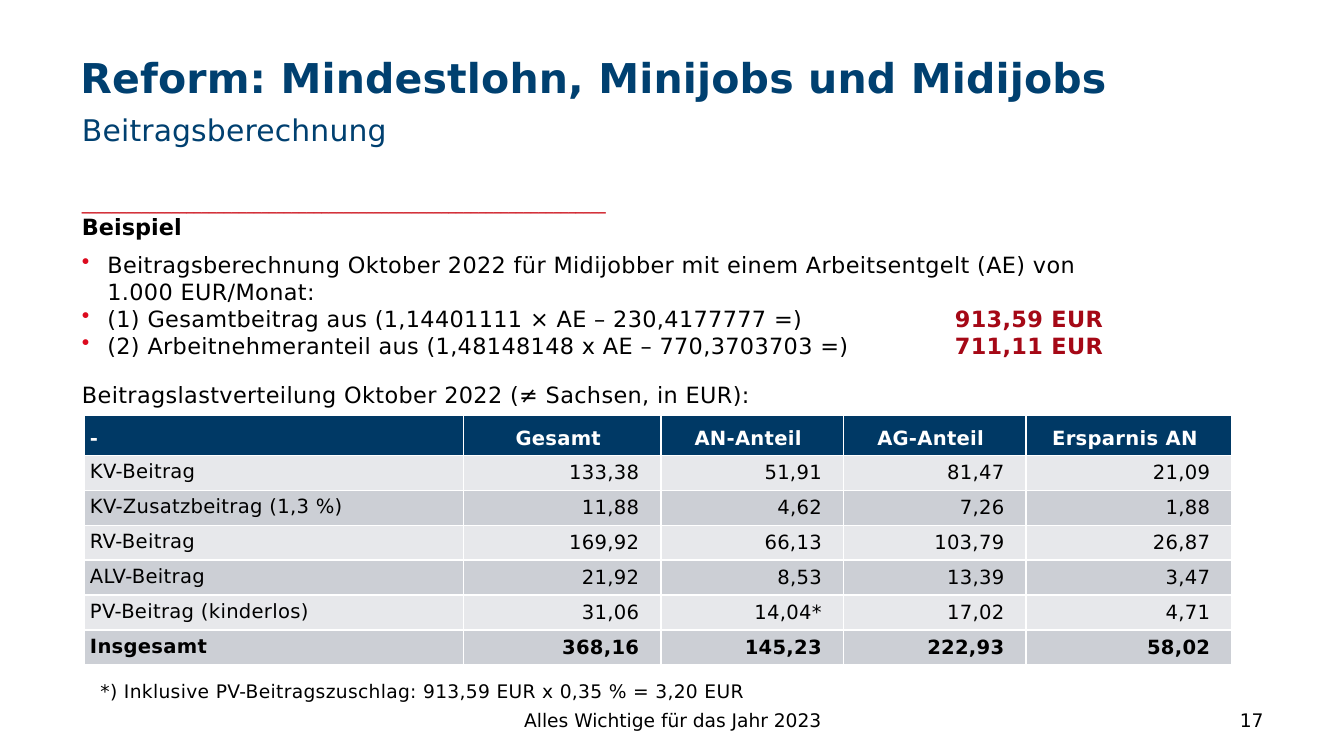
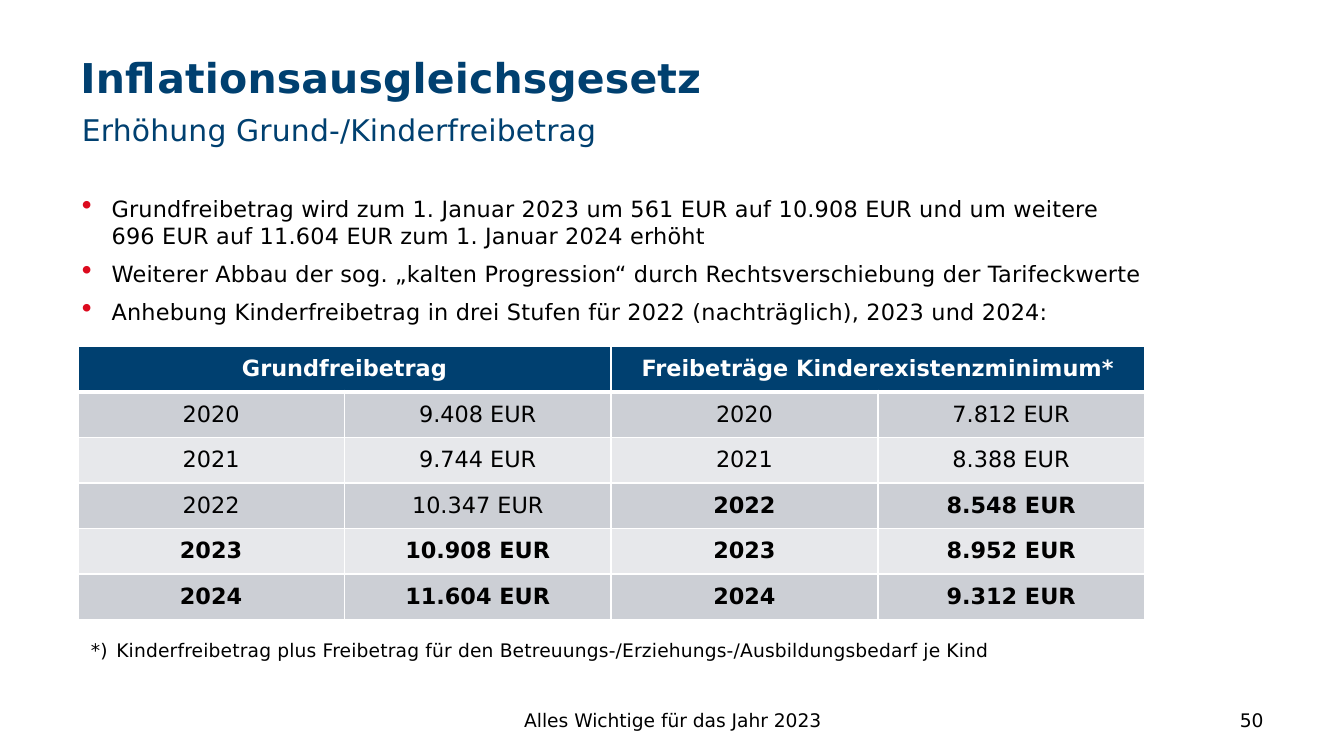
from dataclasses import dataclass

from lxml.etree import SubElement
from pptx import Presentation
from pptx.dml.color import RGBColor
from pptx.enum.text import MSO_ANCHOR, PP_ALIGN
from pptx.oxml.ns import qn
from pptx.util import Cm, Pt


@dataclass(frozen=True)
class Theme:
    font: str = "DejaVu Sans"
    blue: str = "004070"
    navy: str = "003965"
    red: str = "A50816"
    rule: str = "CE1620"
    dot: str = "DC0A1E"
    black: str = "000000"
    white: str = "FFFFFF"
    light: str = "E7E8EB"
    dark: str = "CCCFD5"
    title: float = 22
    lead: float = 16
    text: float = 12
    cell: float = 10.5
    small: float = 10
    tiny: float = 8


THEME = Theme()
FOOTER = "Alles Wichtige für das Jahr 2023"


def style_run(run, size, color=THEME.black, bold=False, space=0):
    font = run.font
    font.name, font.size, font.bold = THEME.font, Pt(size), bold
    font.color.rgb = RGBColor.from_string(color)
    if space:
        run._r.get_or_add_rPr().set("spc", str(space))


def style_para(para, size, color=THEME.black, bold=False, space=0, align=None):
    para.alignment = align
    for run in para.runs:
        style_run(run, size, color, bold, space)
    for gap in para._p.findall(qn("a:br")):
        SubElement(gap, qn("a:rPr")).set("sz", str(int(size * 100)))


def add_frame(slide, box, anchor=MSO_ANCHOR.TOP, top=0.13):
    frame = slide.shapes.add_textbox(*map(Cm, box)).text_frame
    frame.word_wrap = True
    frame.vertical_anchor = anchor
    frame.margin_left = frame.margin_right = Cm(0.25)
    frame.margin_top, frame.margin_bottom = Cm(top), Cm(0.13)
    return frame


def add_line(slide, box, text, size, anchor=MSO_ANCHOR.TOP, top=0.13, **look):
    frame = add_frame(slide, box, anchor, top)
    frame.text = text
    style_para(frame.paragraphs[0], size, **look)
    return frame.paragraphs[0]


def add_bullet(para, indent, scale=100):
    props = para._p.get_or_add_pPr()
    props.set("marL", str(Cm(indent)))
    props.set("indent", str(-Cm(indent)))
    color = SubElement(props, qn("a:buClr"))
    SubElement(color, qn("a:srgbClr")).set("val", THEME.dot)
    if scale != 100:
        SubElement(props, qn("a:buSzPct")).set("val", str(scale * 1000))
    SubElement(props, qn("a:buChar")).set("char", "•")


def add_tab(para, place, align):
    tabs = SubElement(para._p.get_or_add_pPr(), qn("a:tabLst"))
    tab = SubElement(tabs, qn("a:tab"))
    tab.set("pos", str(Cm(place)))
    tab.set("algn", align)


def set_edges(cell, base=1):
    props = cell._tc.get_or_add_tcPr()
    for at, (side, width) in enumerate(zip("LRTB", (1, 1, 1, base))):
        edge = SubElement(props, qn(f"a:ln{side}"))
        edge.set("w", str(Pt(width)))
        fill = SubElement(edge, qn("a:solidFill"))
        SubElement(fill, qn("a:srgbClr")).set("val", THEME.white)
        props.insert(at, edge)


def fill_cell(cell, text, fill, size, pads, anchor, base=1, **look):
    cell.text_frame.text = text
    style_para(cell.text_frame.paragraphs[0], size, **look)
    cell.vertical_anchor = anchor
    cell.margin_left, cell.margin_top, cell.margin_right, cell.margin_bottom = map(Cm, pads)
    cell.fill.solid()
    cell.fill.fore_color.rgb = RGBColor.from_string(fill)
    set_edges(cell, base)


def add_grid(slide, left, top, widths, heights):
    box = left, top, sum(widths), sum(heights)
    grid = slide.shapes.add_table(len(heights), len(widths), *map(Cm, box)).table
    grid.horz_banding = False
    for col, width in zip(grid.columns, widths):
        col.width = Cm(width)
    for row, height in zip(grid.rows, heights):
        row.height = Cm(height)
    return grid


def add_page(deck, title, lead, number):
    slide = deck.slides.add_slide(deck.slide_layouts[6])
    add_line(slide, (1.27, 0.81, 20.6, 1.12), title, THEME.title, top=0.18,
             color=THEME.blue, bold=True, space=10)
    add_line(slide, (1.3, 1.93, 20.6, 0.71), lead, THEME.lead, top=0.18,
             color=THEME.blue, space=10)
    add_line(slide, (8.69, 13.23, 8.05, 0.76), FOOTER, THEME.small,
             MSO_ANCHOR.MIDDLE, align=PP_ALIGN.CENTER)
    add_line(slide, (18.21, 13.23, 5.92, 0.76), number, THEME.small,
             MSO_ANCHOR.MIDDLE, align=PP_ALIGN.RIGHT)
    return slide


def add_sample(slide, box):
    frame = add_frame(slide, box)
    head = frame.paragraphs[0]
    head.text = "_" * 70 + "\nBeispiel"
    style_para(head, THEME.tiny, THEME.rule, True)
    head.runs[0].font.italic = True
    style_run(head.runs[1], THEME.text, bold=True)
    items = (
        ("Beitragsberechnung Oktober 2022 für Midijobber mit einem Arbeitsentgelt (AE) "
         "von 1.000 EUR/Monat:", ""),
        ("(1) Gesamtbeitrag aus (1,14401111 × AE – 230,4177777 =)\t", "913,59 EUR"),
        ("(2) Arbeitnehmeranteil aus (1,48148148 x AE – 770,3703703 =)\t", "711,11 EUR"),
    )
    for text, sum_text in items:
        para = frame.add_paragraph()
        para.text = text
        add_bullet(para, 0.48)
        style_para(para, THEME.text, space=20)
        if sum_text:
            add_tab(para, 19.3, "r")
            run = para.add_run()
            run.text = sum_text
            style_run(run, THEME.text, THEME.red, True, 20)
        else:
            para.space_before = Pt(6)
    last = frame.add_paragraph()
    last.text = "Beitragslastverteilung Oktober 2022 (≠ Sachsen, in EUR):"
    last.space_before = Pt(12)
    style_para(last, THEME.text, space=20)


def add_shares(slide, left, top):
    rows = (
        ("-", "Gesamt", "AN-Anteil", "AG-Anteil", "Ersparnis AN"),
        ("KV-Beitrag", "133,38", "51,91", "81,47", "21,09"),
        ("KV-Zusatzbeitrag (1,3 %)", "11,88", "4,62", "7,26", "1,88"),
        ("RV-Beitrag", "169,92", "66,13", "103,79", "26,87"),
        ("ALV-Beitrag", "21,92", "8,53", "13,39", "3,47"),
        ("PV-Beitrag (kinderlos)", "31,06", "14,04*", "17,02", "4,71"),
        ("Insgesamt", "368,16", "145,23", "222,93", "58,02"),
    )
    widths = 7.16, 3.73, 3.45, 3.45, 3.89
    grid = add_grid(slide, left, top, widths, [0.76] + [0.66] * 6)
    for r, row in enumerate(rows):
        head = r == 0
        fill = THEME.navy if head else (THEME.dark, THEME.light)[r % 2]
        for c, text in enumerate(row):
            first = c == 0
            anchor = MSO_ANCHOR.TOP if first else MSO_ANCHOR.MIDDLE
            align = PP_ALIGN.CENTER if head else PP_ALIGN.RIGHT
            fill_cell(grid.cell(r, c), text, fill, THEME.cell,
                      (0.1, 0.1, 0.25 if head or first else 0.41, 0.1),
                      MSO_ANCHOR.BOTTOM if head else anchor,
                      color=THEME.white if head else THEME.black,
                      bold=r in (0, len(rows) - 1), space=20,
                      align=PP_ALIGN.LEFT if first else align)


def add_points(slide, box):
    items = (
        "Grundfreibetrag wird zum 1. Januar 2023 um 561 EUR auf 10.908 EUR und um weitere\n"
        "696 EUR auf 11.604 EUR zum 1. Januar 2024 erhöht",
        "Weiterer Abbau der sog. „kalten Progression“ durch Rechtsverschiebung der Tarifeckwerte",
        "Anhebung Kinderfreibetrag in drei Stufen für 2022 (nachträglich), 2023 und 2024:",
    )
    frame = add_frame(slide, box)
    for i, text in enumerate(items):
        para = frame.add_paragraph() if i else frame.paragraphs[0]
        para.text = text
        add_bullet(para, 0.56, 130)
        para.space_after = Pt(6)
        style_para(para, THEME.text, space=10)


def add_limits(slide, left, top):
    heads = "Grundfreibetrag", "Freibeträge Kinderexistenzminimum*"
    rows = (
        ("2020", "9.408", "7.812"),
        ("2021", "9.744", "8.388"),
        ("2022", "10.347", "8.548"),
        ("2023", "10.908", "8.952"),
        ("2024", "11.604", "9.312"),
    )
    bolds = "2023", "2022"
    pads = 0.25, 0.13, 0.25, 0.13
    look = dict(size=THEME.text, pads=pads, anchor=MSO_ANCHOR.MIDDLE, align=PP_ALIGN.CENTER)
    grid = add_grid(slide, left, top, [5.04] * 4, [0.86] * 6)
    for h, head in enumerate(heads):
        cell = grid.cell(0, 2 * h)
        cell.merge(grid.cell(0, 2 * h + 1))
        fill_cell(cell, head, THEME.blue, base=3, color=THEME.white, bold=True, **look)
        set_edges(grid.cell(0, 2 * h + 1), 3)
        for r, row in enumerate(rows, 1):
            fill = (THEME.light, THEME.dark)[r % 2]
            for c, text in enumerate((row[0], f"{row[h + 1]} EUR")):
                fill_cell(grid.cell(r, 2 * h + c), text, fill,
                          bold=row[0] >= bolds[h], **look)


def make_share_slide(deck):
    slide = add_page(deck, "Reform: Mindestlohn, Minijobs und Midijobs",
                     "Beitragsberechnung", "17")
    add_sample(slide, (1.3, 3.56, 20.6, 9.17))
    add_shares(slide, 1.6, 7.85)
    add_line(slide, (1.65, 12.73, 15.54, 0.69),
             "*) Inklusive PV-Beitragszuschlag: 913,59 EUR x 0,35 % = 3,20 EUR",
             THEME.small, space=20)


def make_limit_slide(deck):
    slide = add_page(deck, "Inflationsausgleichsgesetz",
                     "Erhöhung Grund-/Kinderfreibetrag", "50")
    add_points(slide, (1.3, 3.56, 23, 9.17))
    add_limits(slide, 1.47, 6.55)
    note = add_line(slide, (1.47, 11.94, 23.9, 0.69),
                    "*)\tKinderfreibetrag plus Freibetrag für den "
                    "Betreuungs-/Erziehungs-/Ausbildungsbedarf je Kind",
                    THEME.small, space=10)
    add_tab(note, 0.48, "l")


def main():
    deck = Presentation()
    deck.slide_width, deck.slide_height = Cm(25.4), Cm(14.29)
    make_share_slide(deck)
    make_limit_slide(deck)
    deck.save("out.pptx")


if __name__ == "__main__":
    main()
